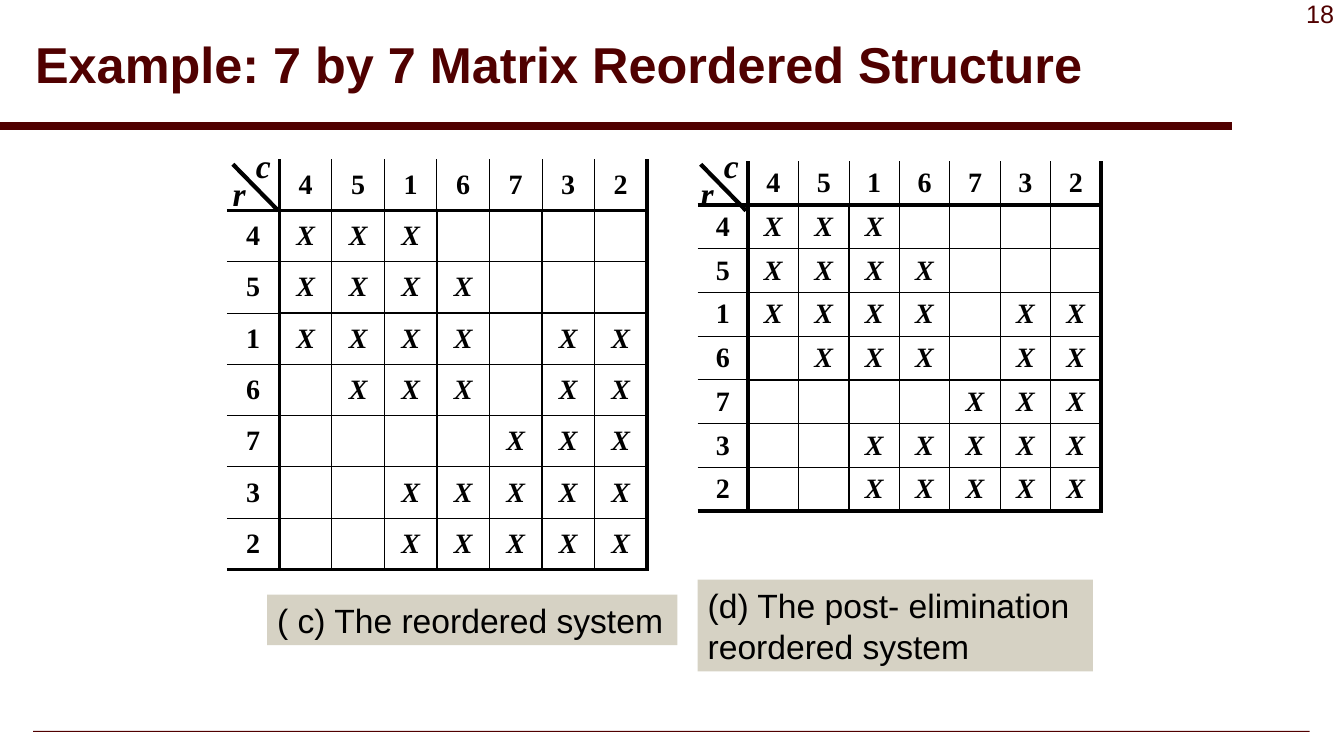
import pptx
import pptx.util
import pptx.dml.color
import pptx.enum.shapes
import pptx.enum.text
import pptx.oxml.ns
import lxml.etree

Inches = pptx.util.Inches
Pt = pptx.util.Pt
RGB = pptx.dml.color.RGBColor
Align = pptx.enum.text.PP_ALIGN
Anchor = pptx.enum.text.MSO_ANCHOR

MAROON = RGB(0x50, 0x00, 0x00)
BLACK = RGB(0x00, 0x00, 0x00)
SAND = RGB(0xD6, 0xD2, 0xC4)
SANS = "Arial"
SERIF = "Times New Roman"

# Column and row order, and the nonzero pattern shared by both matrices
ORDER = "4516732"
MARKS = [
    "XXX....",
    "XXXX...",
    "XXXX.XX",
    ".XXX.XX",
    "....XXX",
    "..XXXXX",
    "..XXXXX",
]
SIZE = len(ORDER) + 1


def tag(elem, name, **attrs):
    return lxml.etree.SubElement(elem, pptx.oxml.ns.qn(name), **attrs)


def weight(edge, band):
    """Border width in points at a grid edge, within the given band."""
    if edge == 0:
        return 0
    if edge in (1, SIZE):
        return 3
    return 0.75 if band == 0 else 1


class Deck:
    def __init__(self):
        self.prs = pptx.Presentation()
        self.prs.slide_width = Inches(13.33)
        self.prs.slide_height = Inches(7.5)
        self.slide = self.prs.slides.add_slide(self.prs.slide_layouts[6])
        self.shapes = self.slide.shapes

    def put(self, para, text, size, font=SANS, color=BLACK, bold=False,
            slant=False):
        run = para.add_run()
        run.text = text
        run.font.size = Pt(size)
        run.font.name = font
        run.font.color.rgb = color
        run.font.bold = bold
        run.font.italic = slant

    def text(self, box, words, size, align=Align.LEFT, anchor=Anchor.TOP,
             space=1.0, **style):
        shape = self.shapes.add_textbox(*map(Inches, box))
        frame = shape.text_frame
        frame.word_wrap = True
        frame.vertical_anchor = anchor
        para = frame.paragraphs[0]
        para.alignment = align
        para.line_spacing = space
        self.put(para, words, size, **style)

    def block(self, box, color):
        kind = pptx.enum.shapes.MSO_SHAPE.RECTANGLE
        shape = self.shapes.add_shape(kind, *map(Inches, box))
        shape.shadow.inherit = False
        shape.fill.solid()
        shape.fill.fore_color.rgb = color
        shape.line.fill.background()
        return shape

    def label(self, box, words, wrap):
        frame = self.block(box, SAND).text_frame
        frame.word_wrap = wrap
        frame.vertical_anchor = Anchor.MIDDLE
        para = frame.paragraphs[0]
        para.alignment = Align.LEFT
        self.put(para, words, 24)

    def line(self, start, end, color, width):
        kind = pptx.enum.shapes.MSO_CONNECTOR.STRAIGHT
        link = self.shapes.add_connector(kind, *map(Inches, start + end))
        link.line.color.rgb = color
        link.line.width = Pt(width)
        tag(link._element.spPr, "a:effectLst")

    def border(self, cell, row, col):
        props = cell._tc.get_or_add_tcPr()
        sides = {
            "L": weight(col, row),
            "R": weight(col + 1, row),
            "T": weight(row, col),
            "B": weight(row + 1, col),
        }
        for side, width in sides.items():
            edge = tag(props, "a:ln" + side, w=str(int(Pt(width))))
            if width:
                tag(tag(edge, "a:solidFill"), "a:srgbClr", val=str(BLACK))
            else:
                tag(edge, "a:noFill")

    def matrix(self, box):
        frame = self.shapes.add_table(SIZE, SIZE, *map(Inches, box))
        table = frame.table
        table.first_row = False
        table.horz_banding = False
        for col in table.columns:
            col.width = Inches(box[2] / SIZE)
        for row in table.rows:
            row.height = Inches(box[3] / SIZE)
        lines = ["." + ORDER] + [n + m for n, m in zip(ORDER, MARKS)]
        for r, line in enumerate(lines):
            for c, mark in enumerate(line):
                cell = table.cell(r, c)
                cell.vertical_anchor = Anchor.MIDDLE
                self.border(cell, r, c)
                cell.fill.background()
                if mark != ".":
                    para = cell.text_frame.paragraphs[0]
                    para.alignment = Align.CENTER
                    self.put(para, mark, 20, SERIF, bold=True,
                             slant=mark == "X")

    def corner(self, left):
        """Row and column letters parted by a diagonal."""
        for name, dx, top in (("r", 0, 1.67), ("c", 0.23, 1.39)):
            self.text((left + dx, top, 0.21, 0.5), name, 24, font=SERIF,
                      bold=True, slant=True)
        self.line((left + 0.55, 2.09), (left + 0.1, 1.63), BLACK, 3)


def main():
    deck = Deck()

    # Frame of the slide: rules, page number and title
    deck.block((0.33, 7.25, 12.66, 0.01), MAROON)
    deck.line((0, 1.25), (12.22, 1.25), MAROON, 6)
    deck.text((12.13, -0.07, 1.2, 0.4), "18", 18, Align.RIGHT, color=MAROON)
    deck.text((0.25, 0.08, 11.92, 1.17),
              "Example: 7 by 7 Matrix Reordered Structure", 36,
              anchor=Anchor.MIDDLE, space=0.9, color=MAROON, bold=True)

    # Matrices with their captions
    deck.matrix((2.25, 1.58, 4.17, 4.07))
    deck.label((2.65, 5.9, 4.07, 0.5), "( c) The reordered system", False)
    deck.matrix((6.92, 1.6, 4, 3.47))
    deck.label((6.92, 5.75, 3.92, 0.91),
               "(d) The post- elimination reordered system", True)

    # Corner marks
    for left in (2.21, 6.85):
        deck.corner(left)

    deck.prs.save("out.pptx")


if __name__ == "__main__":
    main()
